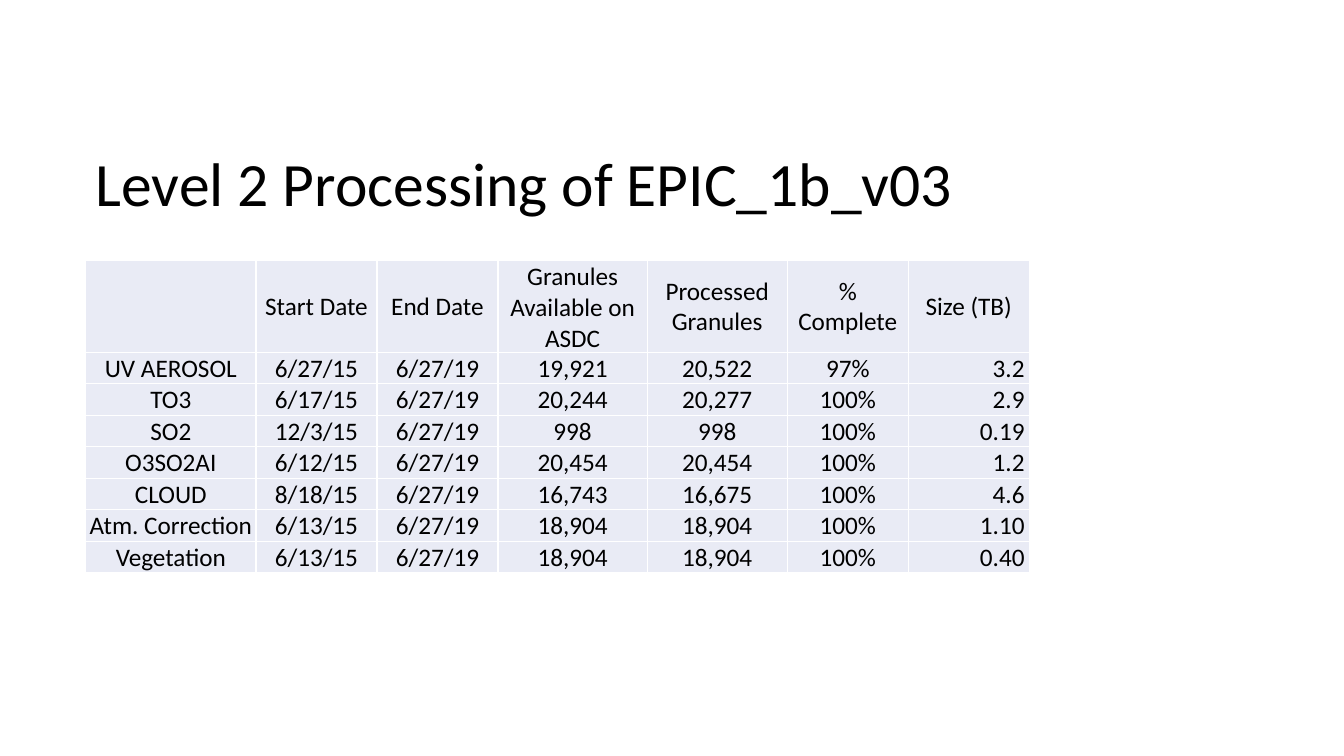
"""Build the slide on Level 2 processing of EPIC_1b_v03."""
import pptx
import pptx.dml.color
import pptx.enum.text
import pptx.oxml
import pptx.oxml.ns
import pptx.util

Cm, Pt = pptx.util.Cm, pptx.util.Pt
ALIGN = pptx.enum.text.PP_ALIGN
ANCHOR = pptx.enum.text.MSO_ANCHOR
BLACK = pptx.dml.color.RGBColor(0x00, 0x00, 0x00)
WHITE = pptx.dml.color.RGBColor(0xFF, 0xFF, 0xFF)
PALE = pptx.dml.color.RGBColor(0xE9, 0xEB, 0xF5)

TITLE = "Level 2 Processing of EPIC_1b_v03"
END = "6/27/19"
HEAD = ("", "Start Date", "End Date", "Granules Available on ASDC",
        "Processed Granules", "% Complete", "Size (TB)")
BODY = [
    ("UV AEROSOL", "6/27/15", END, "19,921", "20,522", "97%", "3.2"),
    ("TO3", "6/17/15", END, "20,244", "20,277", "100%", "2.9"),
    ("SO2", "12/3/15", END, "998", "998", "100%", "0.19"),
    ("O3SO2AI", "6/12/15", END, "20,454", "20,454", "100%", "1.2"),
    ("CLOUD", "8/18/15", END, "16,743", "16,675", "100%", "4.6"),
    ("Atm. Correction", "6/13/15", END, "18,904", "18,904", "100%", "1.10"),
    ("Vegetation", "6/13/15", END, "18,904", "18,904", "100%", "0.40"),
]
ROWS = [HEAD] + BODY
WIDTHS = (4.29, 3.05, 3.05, 3.76, 3.53, 3.05, 3.05)
HEIGHTS = [2.06] + [0.76] * len(BODY)
LEFT = 2.16
SIDES = ("lnL", "lnR", "lnT", "lnB")
FONT = {"name": "Calibri"}
PLAIN = {"margin_left": Cm(0.03), "margin_right": Cm(0.03),
         "margin_top": Cm(0.03), "margin_bottom": 0}


def apply(item, values):
    for name, value in values.items():
        setattr(item, name, value)


def write(frame, text, size, **values):
    para = frame.paragraphs[0]
    para.text = text
    apply(para, values)
    apply(para.font, {**FONT, "size": Pt(size)})
    para.font.color.rgb = BLACK


def border(cell):
    props = cell._tc.get_or_add_tcPr()
    for side in SIDES:
        props.append(pptx.oxml.parse_xml(
            f'<a:{side} {pptx.oxml.ns.nsdecls("a")} w="{Pt(1)}"><a:solidFill>'
            f'<a:srgbClr val="{WHITE}"/></a:solidFill></a:{side}>'))


def fill(cell, text, head, last):
    border(cell)
    cell.fill.solid()
    cell.fill.fore_color.rgb = PALE
    apply(cell, PLAIN)
    cell.vertical_anchor = ANCHOR.MIDDLE if head else ANCHOR.BOTTOM
    right = last and not head
    if right:
        cell.margin_right = Cm(0.12)
    write(cell.text_frame, text, 18,
          alignment=ALIGN.RIGHT if right else ALIGN.CENTER)


def main():
    deck = pptx.Presentation()
    apply(deck, {"slide_width": Cm(33.87), "slide_height": Cm(19.05)})
    slide = deck.slides.add_slide(deck.slide_layouts[6])

    box = slide.shapes.add_textbox(Cm(LEFT), Cm(2.87), Cm(29.21), Cm(3.68))
    apply(box.text_frame, {"word_wrap": True, "vertical_anchor": ANCHOR.MIDDLE})
    write(box.text_frame, TITLE, 44, line_spacing=0.9)

    grid = slide.shapes.add_table(
        len(ROWS), len(HEAD), Cm(LEFT), Cm(6.56),
        Cm(sum(WIDTHS)), Cm(sum(HEIGHTS))).table
    for col, width in zip(grid.columns, WIDTHS):
        col.width = Cm(width)
    for row, height in zip(grid.rows, HEIGHTS):
        row.height = Cm(height)
    for i, row in enumerate(ROWS):
        for j, text in enumerate(row):
            fill(grid.cell(i, j), text, i == 0, j == len(HEAD) - 1)

    deck.save("out.pptx")


if __name__ == "__main__":
    main()
